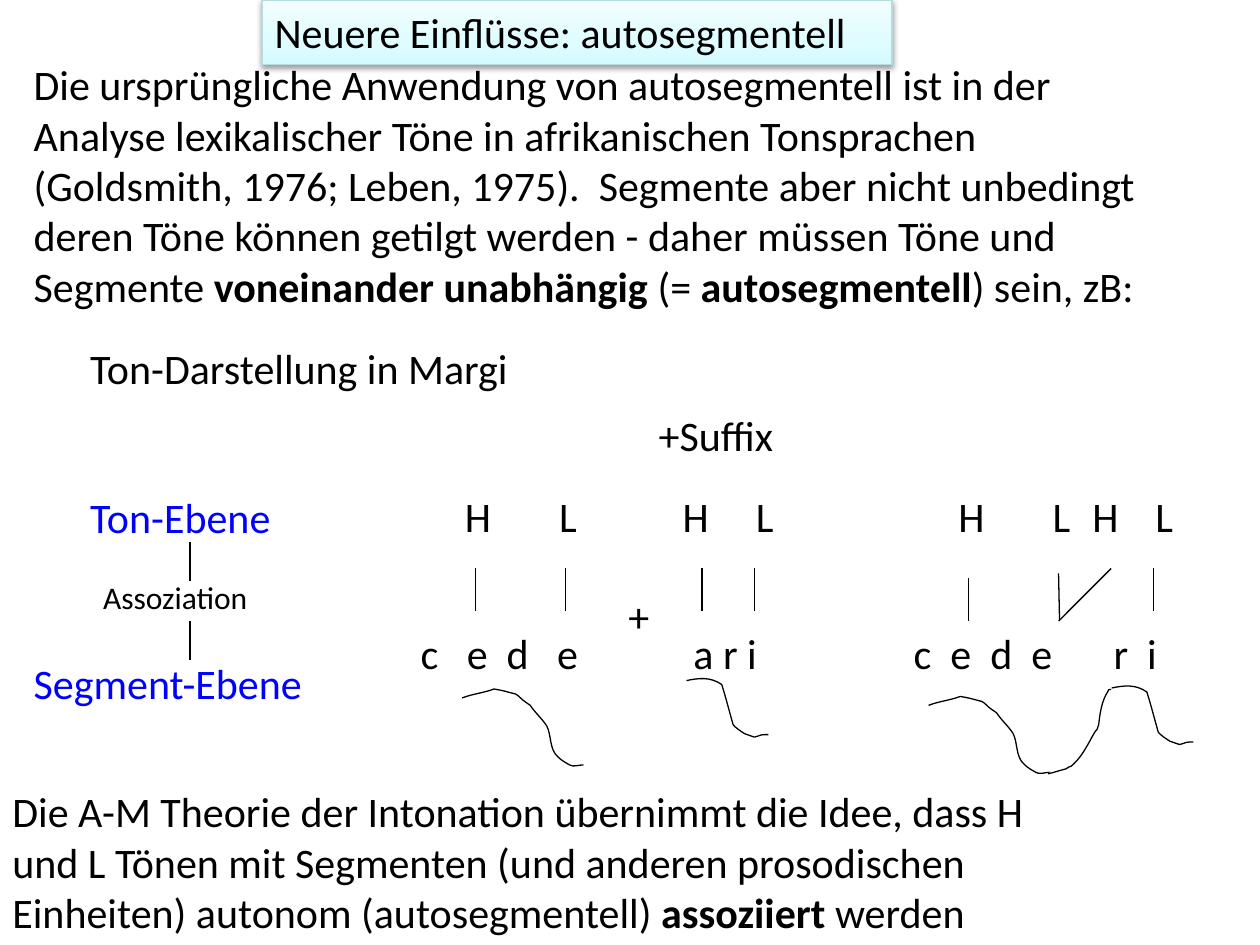
"""Build a slide on autosegmental tone representation in Margi."""
from copy import deepcopy

from lxml.etree import SubElement
from pptx import Presentation
from pptx.dml.color import RGBColor
from pptx.enum.shapes import MSO_CONNECTOR
from pptx.enum.text import MSO_ANCHOR, MSO_AUTO_SIZE, PP_ALIGN
from pptx.oxml.ns import qn
from pptx.util import Cm, Pt

BLACK = RGBColor(0x00, 0x00, 0x00)
BLUE = RGBColor(0x00, 0x00, 0xFF)
BORDER = RGBColor(0xB6, 0xDC, 0xDF)
GRADIENT = [
    (0, RGBColor(0xD3, 0xFB, 0xFF)),
    (0.35, RGBColor(0xDF, 0xFC, 0xFF)),
    (1, RGBColor(0xF2, 0xFE, 0xFF)),
]

prs = Presentation()
prs.slide_width, prs.slide_height = Cm(25.4), Cm(19.05)
s = prs.slides.add_slide(prs.slide_layouts[5])


def add_text(text, x, y, w, h=1.3, sp=None, size=24, color=BLACK, wrap=False):
    """Write text into a box; parts between asterisks are bold."""
    sp = sp or s.shapes.add_textbox(0, 0, 0, 0)
    sp.left, sp.top, sp.width, sp.height = Cm(x), Cm(y), Cm(w), Cm(h)
    tf = sp.text_frame
    tf.word_wrap = wrap
    tf.auto_size = MSO_AUTO_SIZE.SHAPE_TO_FIT_TEXT
    tf.vertical_anchor = MSO_ANCHOR.TOP
    p = tf.paragraphs[0]
    p.alignment = PP_ALIGN.LEFT
    for i, part in enumerate(text.split("*")):
        r = p.add_run()
        r.text = part
        r.font.name = "Calibri"
        r.font.size = Pt(size)
        r.font.bold = i % 2 == 1
        r.font.color.rgb = color
    return sp


title = add_text("Neuere Einflüsse: autosegmentell", 5.28, 0, 12.7,
                 sp=s.shapes.title, wrap=True)
title.text_frame.auto_size = MSO_AUTO_SIZE.NONE
title.fill.gradient()
title.fill.gradient_angle = 90
stops = title._element.spPr.find(".//" + qn("a:gsLst"))
stops.insert(1, deepcopy(stops[0]))
for stop, (position, color) in zip(title.fill.gradient_stops, GRADIENT):
    stop.position = position
    stop.color.rgb = color
title.line.color.rgb = BORDER
title.line.width = Pt(0.75)
title.shadow.inherit = False
shadow = SubElement(title._element.spPr.find(qn("a:effectLst")), qn("a:outerShdw"),
                    blurRad="40000", dist="20000", dir="5400000", rotWithShape="0")
shadow_color = SubElement(shadow, qn("a:srgbClr"), val="000000")
SubElement(shadow_color, qn("a:alpha"), val="38000")

add_text("Die A-M Theorie der Intonation übernimmt die Idee, dass H und L Tönen "
         "mit Segmenten (und anderen prosodischen Einheiten) autonom "
         "(autosegmentell) *assoziiert* werden", 0, 15.72, 21.59, 3.33, wrap=True)
add_text("Die ursprüngliche Anwendung von autosegmentell ist in der Analyse "
         "lexikalischer Töne in afrikanischen Tonsprachen (Goldsmith, 1976; "
         "Leben, 1975).  Segmente aber nicht unbedingt deren Töne können getilgt "
         "werden - daher müssen Töne und Segmente *voneinander unabhängig* "
         "(= *autosegmentell*) sein, zB:", 0.43, 1.06, 23.29, 5.38, wrap=True)

add_text("Ton-Darstellung in Margi", 1.57, 6.78, 9.14)
add_text("+Suffix", 13.03, 8.13, 2.84)
add_text("+", 12.42, 11.78, 0.94)
add_text("Ton-Ebene", 1.57, 9.78, 4.27, color=BLUE)
add_text("Segment-Ebene", 0.43, 13.13, 5.99, color=BLUE)
add_text("Assoziation", 1.83, 11.53, 4.8, 1.02, size=18, wrap=True)

tones = [("H", 9.12), ("L", 11.02), ("H", 13.51), ("L", 14.99),
         ("H", 19.07), ("L", 20.97), ("H", 21.77), ("L", 23.04)]
for tone, x in tones:
    add_text(tone, x, 9.77, 1.04 if tone == "H" else 0.86)

segments = [("c   e  d   e", 8.23, 3.73), ("a r i", 13.73, 1.8),
            ("c  e  d  e", 18.17, 3.33), ("r  i", 22.2, 1.4)]
for segment, x, w in segments:
    add_text(segment, x, 12.52, w)

links = [(x, 12.32, x, 11.46) for x in (9.58, 11.4, 14.15, 15.21, 23.25)]
links += [(3.83, y, 3.83, y + 0.79) for y in (10.92, 12.52)]
links += [(19.53, 12.52, 19.53, 11.66), (21.34, 12.52, 22.4, 11.46)]
for ends in links:
    line = s.shapes.add_connector(MSO_CONNECTOR.STRAIGHT, *map(Cm, ends))
    line.line.color.rgb = BLACK
    line.line.width = Pt(0.75)
    SubElement(line._element.spPr, qn("a:effectLst"))

LONG_FALL = [
    (0.2, -0.08), (0.43, -0.1), (0.64, -0.18),
    (0.91, -0.13), (0.79, -0.15), (1.07, -0.08),
    (1.14, -0.05), (1.19, 0.03), (1.27, 0.08),
    (1.3, 0.1), (1.37, 0.15), (1.37, 0.15),
    (1.47, 0.3), (1.6, 0.41), (1.7, 0.56),
    (1.8, 0.74), (1.75, 1.04), (1.93, 1.19),
    (2.01, 1.27), (2.08, 1.3), (2.16, 1.35),
    (2.24, 1.4), (2.34, 1.35), (2.44, 1.35),
]
SHORT_FALL = [
    (0.25, -0.05), (0.48, -0.08), (0.71, 0.08),
    (0.79, 0.33), (0.86, 0.61), (0.94, 0.89),
    (0.97, 0.94), (1.12, 1.04), (1.17, 1.07),
    (1.22, 1.09), (1.37, 1.14), (1.37, 1.14),
    (1.55, 1.09), (1.47, 1.09), (1.65, 1.09),
]
RISE = [
    (0.2, -0.05), (0.1, -0.03), (0.36, -0.1),
    (0.38, -0.13), (0.46, -0.15), (0.46, -0.15),
    (0.64, -0.3), (0.74, -0.48), (0.84, -0.66),
    (1.04, -1.04), (0.94, -0.76), (1.02, -0.99),
    (1.04, -1.17), (1.07, -1.42), (1.17, -1.6),
    (1.24, -1.7), (1.19, -1.7), (1.27, -1.7),
]
STROKE = [(-0.02, -0.94)]
outlines = [(LONG_FALL, 9.32, 14.07), (SHORT_FALL, 13.84, 13.72),
            (LONG_FALL, 18.72, 14.22), (RISE, 21.13, 15.6),
            (SHORT_FALL, 22.41, 13.87), (STROKE, 21.36, 12.5)]
for outline, x, y in outlines:
    builder = s.shapes.build_freeform(Cm(x), Cm(y))
    builder.add_line_segments([(Cm(x + dx), Cm(y + dy)) for dx, dy in outline],
                              close=False)
    sp = builder.convert_to_shape()
    sp.fill.background()
    sp.line.color.rgb = BLACK
    sp.line.width = Pt(0.75)
    sp.shadow.inherit = False
    trace = sp._element.spPr.find(".//" + qn("a:path"))
    steps = trace.findall(qn("a:lnTo"))
    for triple in zip(steps[::3], steps[1::3], steps[2::3]):
        bezier = SubElement(trace, qn("a:cubicBezTo"))
        for step in triple:
            bezier.append(step[0])
            trace.remove(step)

prs.save("out.pptx")
